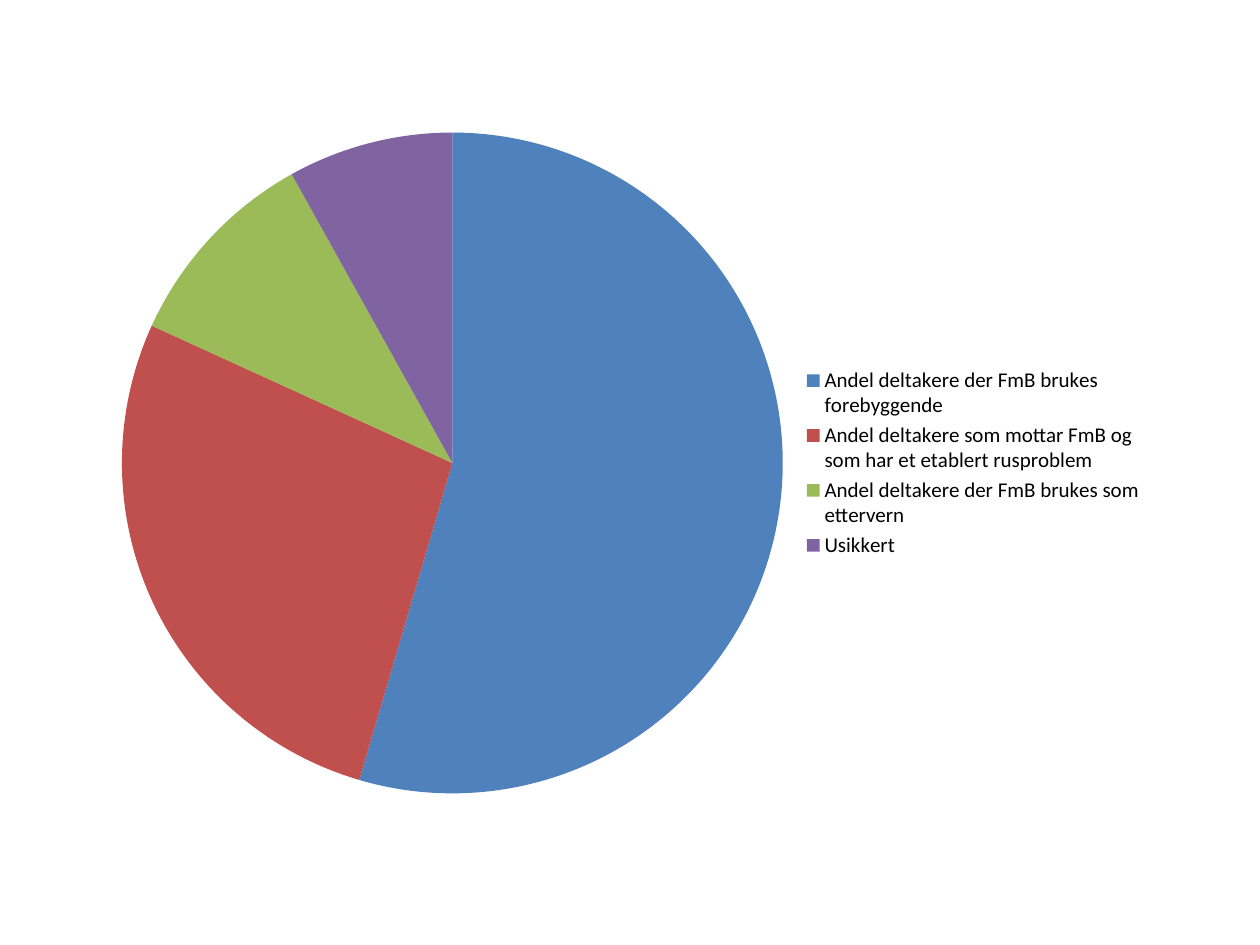
from dataclasses import dataclass

from pptx import Presentation
from pptx.chart.data import CategoryChartData
from pptx.dml.color import RGBColor
from pptx.enum.chart import XL_CHART_TYPE, XL_LEGEND_POSITION
from pptx.util import Inches, Pt


@dataclass(frozen=True)
class Theme:
    font: str = "Calibri"
    text: str = "000000"
    chart_size: int = 10
    legend_size: int = 12
    slices: tuple = ("4F81BD", "C0504D", "9BBB59", "8064A2")


class SlideBuilder:
    """Holds the theme and the slide being built."""

    def __init__(self, slide, theme):
        self.slide = slide
        self.theme = theme

    def style_font(self, font, size):
        font.name = self.theme.font
        font.size = Pt(size)
        font.color.rgb = RGBColor.from_string(self.theme.text)

    def add_pie(self, shares, left, top, width, height):
        """Draw a pie, one colour per slice, with its legend on the right."""
        participants = CategoryChartData(number_format="0")
        participants.categories = list(shares)
        participants.add_series("Series 1", list(shares.values()))
        pie = self.slide.shapes.add_chart(
            XL_CHART_TYPE.PIE, Inches(left), Inches(top),
            Inches(width), Inches(height), participants,
        ).chart
        pie.has_title = False
        self.style_font(pie.font, self.theme.chart_size)

        pie.has_legend = True
        pie.legend.position = XL_LEGEND_POSITION.RIGHT
        pie.legend.include_in_layout = False
        self.style_font(pie.legend.font, self.theme.legend_size)

        pie.plots[0].vary_by_categories = True
        points = pie.plots[0].series[0].points
        for index, color in enumerate(self.theme.slices):
            fill = points[index].format.fill
            fill.solid()
            fill.fore_color.rgb = RGBColor.from_string(color)


def main():
    deck = Presentation()
    deck.slide_width = Inches(10)
    deck.slide_height = Inches(7.5)
    blank_layout = deck.slide_layouts[6]

    builder = SlideBuilder(deck.slides.add_slide(blank_layout), Theme())
    participant_shares = {
        "Andel deltakere der FmB brukes forebyggende": 54,
        "Andel deltakere som mottar FmB og som har et etablert rusproblem": 27,
        "Andel deltakere der FmB brukes som ettervern": 10,
        "Usikkert": 8,
    }
    builder.add_pie(participant_shares, 0.83, 0.76, 8.35, 5.83)
    deck.save("out.pptx")


if __name__ == "__main__":
    main()
